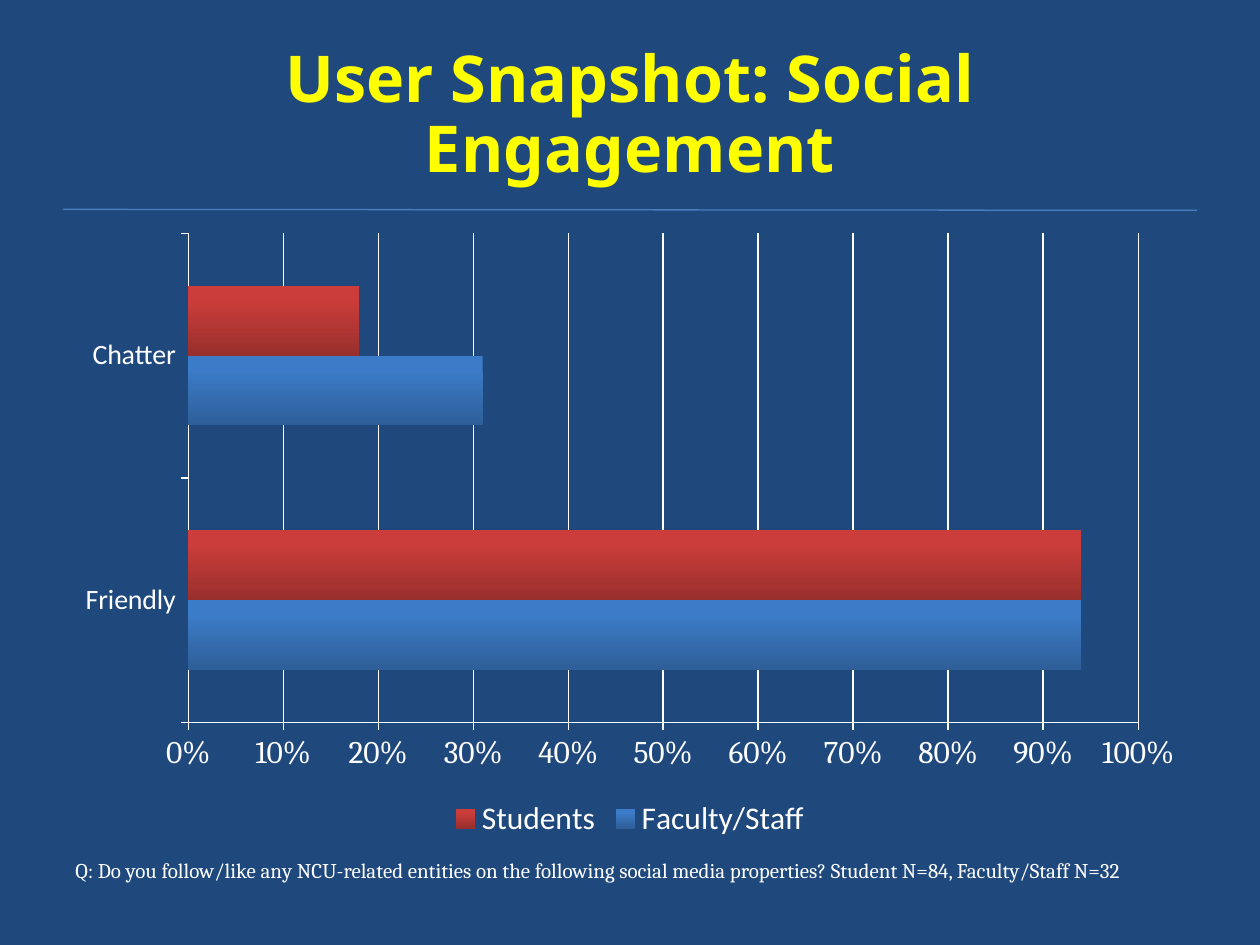
from lxml.etree import SubElement
from pptx import Presentation
from pptx.chart.data import CategoryChartData
from pptx.dml.color import RGBColor
from pptx.enum.chart import XL_CHART_TYPE, XL_LEGEND_POSITION, XL_TICK_MARK
from pptx.enum.shapes import MSO_CONNECTOR
from pptx.enum.text import MSO_ANCHOR, MSO_AUTO_SIZE, PP_ALIGN
from pptx.oxml.ns import qn
from pptx.util import Cm, Pt

COLOURS = {
    "background": "1F497D",
    "title": "FFFF00",
    "text": "FFFFFF",
    "rule": "4B7EBC",
}
SERIES = {
    "Faculty/Staff": {"values": (0.94, 0.31), "gradient": ("3C7BC7", "2E5F99")},
    "Students": {"values": (0.94, 0.18), "gradient": ("CB3D3A", "982F2D")},
}
CATEGORIES = ("Friendly", "Chatter")
QUESTION = ("Q: Do you follow/like any NCU-related entities on the following social "
            "media properties? Student N=84, Faculty/Staff N=32")
LEFT, WIDTH = Cm(1.27), Cm(22.86)


def colour(name):
    return RGBColor.from_string(COLOURS.get(name, name))


def format_font(font, color, **values):
    font.color.rgb = colour(color)
    for name, value in values.items():
        setattr(font, name, value)


def place(shape, box):
    for name, value in zip(("left", "top", "width", "height"), box):
        setattr(shape, name, value)


def add_title(page, box):
    title = page.shapes.title
    place(title, box)
    frame = title.text_frame
    frame.auto_size = MSO_AUTO_SIZE.NONE
    frame.vertical_anchor = MSO_ANCHOR.MIDDLE
    para = frame.paragraphs[0]
    para.alignment = PP_ALIGN.CENTER
    para.line_spacing = 0.9
    span = para.add_run()
    span.text = "User Snapshot: Social Engagement"
    format_font(span.font, "title", name="Noto Sans", size=Pt(36.9), bold=True)


def add_rule(page, box):
    left, top, width, height = box
    rule = page.shapes.add_connector(
        MSO_CONNECTOR.STRAIGHT, left, top, left + width, top + height)
    rule.line.color.rgb = colour("rule")
    rule.line.width = Pt(0.75)
    SubElement(rule._element.spPr, qn("a:effectLst"))


def format_axis(axis):
    axis.major_tick_mark = XL_TICK_MARK.OUTSIDE
    axis.minor_tick_mark = XL_TICK_MARK.NONE
    axis.format.line.color.rgb = colour("text")
    axis.format.line.width = Pt(0.75)


def fill_series(series, gradient):
    """Shade the bars downwards, from the bright colour to the dark one."""
    fill = series.format.fill
    fill.gradient()
    fill.gradient_angle = 270
    for stop, position, shade in zip(fill.gradient_stops, (0.2, 1), gradient):
        stop.position = position
        stop.color.rgb = colour(shade)
    series.invert_if_negative = False


def add_engagement_chart(page, box):
    data = CategoryChartData(number_format="0%")
    data.categories = CATEGORIES
    for name, entry in SERIES.items():
        data.add_series(name, entry["values"])
    chart = page.shapes.add_chart(XL_CHART_TYPE.BAR_CLUSTERED, *box, data).chart
    chart.has_title = False
    format_font(chart.font, "text", name="Cambria", size=Pt(18))

    plot = chart.plots[0]
    plot.gap_width = 150
    plot.vary_by_categories = False
    for series in plot.series:
        fill_series(series, SERIES[series.name]["gradient"])

    categories, values = chart.category_axis, chart.value_axis
    for axis in (categories, values):
        format_axis(axis)
    format_font(categories.tick_labels.font, "text", name="Calibri", size=Pt(16))
    values.minimum_scale, values.maximum_scale, values.major_unit = 0, 1, 0.1
    values.tick_labels.number_format = "0%"
    values.tick_labels.number_format_is_linked = False
    values.has_major_gridlines = True
    values.major_gridlines.format.line.color.rgb = colour("text")
    values.major_gridlines.format.line.width = Pt(0.75)

    chart.has_legend = True
    chart.legend.position = XL_LEGEND_POSITION.BOTTOM
    chart.legend.include_in_layout = False
    format_font(chart.legend.font, "text", name="Calibri", size=Pt(18))


def add_question(page, box):
    frame = page.shapes.add_textbox(*box).text_frame
    frame.word_wrap = True
    span = frame.paragraphs[0].add_run()
    span.text = QUESTION
    format_font(span.font, "text", name="Cambria", size=Pt(12))


def main():
    deck = Presentation()
    deck.slide_width, deck.slide_height = Cm(25.4), Cm(19.05)
    page = deck.slides.add_slide(deck.slide_layouts.get_by_name("Title Only"))
    page.background.fill.solid()
    page.background.fill.fore_color.rgb = colour("background")
    add_title(page, (LEFT, Cm(0.76), WIDTH, Cm(3.18)))
    add_engagement_chart(page, (LEFT, Cm(4.45), WIDTH, Cm(12.57)))
    add_question(page, (LEFT, Cm(17.17), WIDTH, Cm(1.27)))
    add_rule(page, (LEFT, Cm(4.22), WIDTH, Cm(0.02)))
    deck.save("out.pptx")


if __name__ == "__main__":
    main()
